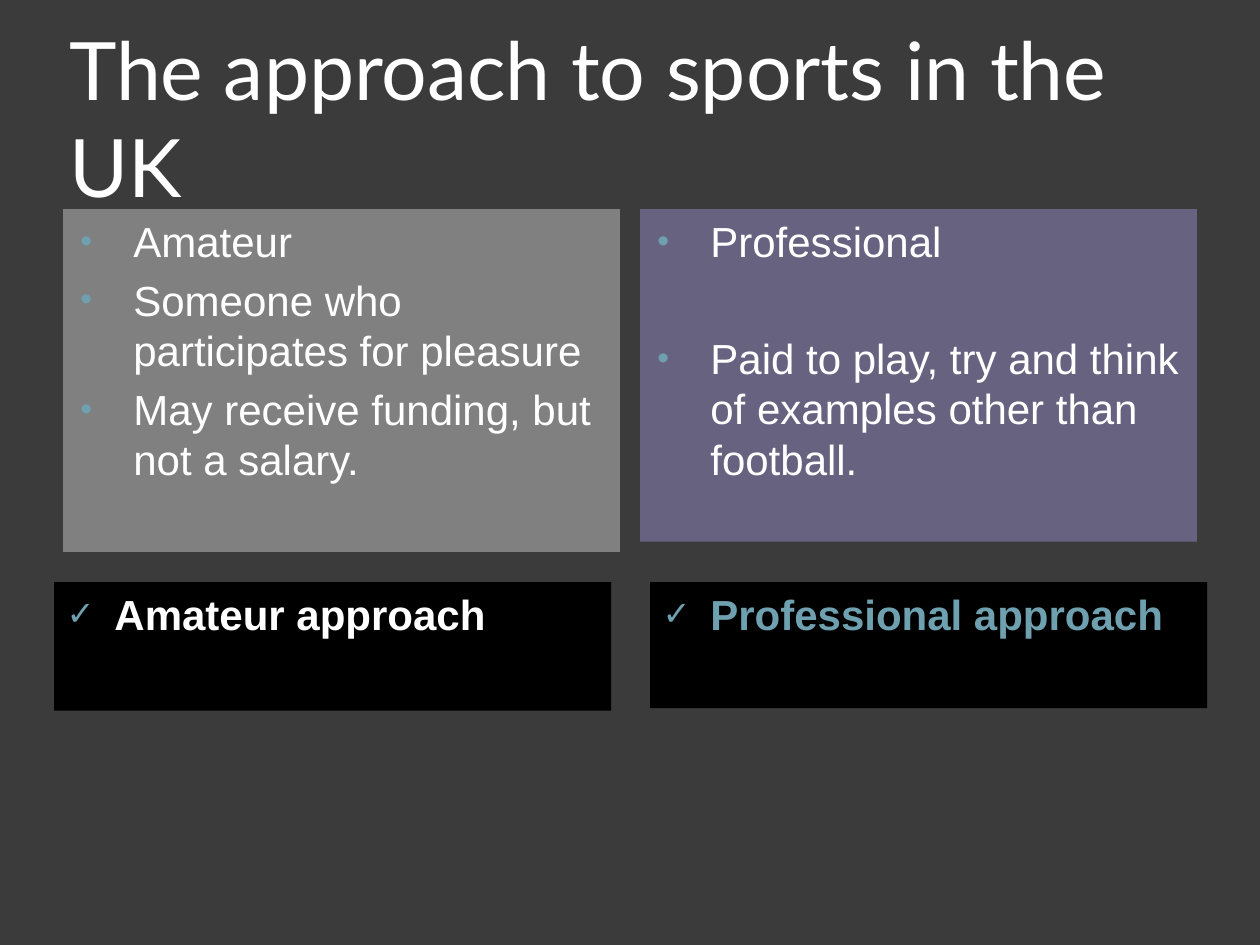
from lxml.etree import SubElement
from pptx import Presentation
from pptx.dml.color import RGBColor
from pptx.enum.shapes import MSO_SHAPE as Shape
from pptx.enum.text import MSO_ANCHOR as Anchor, PP_ALIGN as Align
from pptx.oxml.ns import qn
from pptx.util import Inches, Pt

WHITE, TEAL, BLACK = "FFFFFF", "6EA0B0", "000000"
GREY, PURPLE, DARK = "808080", "67627F", "3B3B3B"
WIDE = 4.42


def paint(fill, color):
    fill.solid()
    fill.fore_color.rgb = RGBColor.from_string(color)


def style(para, size, name, color, bold=False):
    para.alignment = Align.LEFT
    for run in para.runs:
        font = run.font
        font.size, font.name, font.bold = Pt(size), name, bold
        font.color.rgb = RGBColor.from_string(color)


def add_mark(para, mark, left, hang):
    """Give the paragraph a teal bullet and a hanging indent."""
    props = para._p.get_or_add_pPr()
    props.set("marL", str(Inches(left)))
    props.set("indent", str(-Inches(hang)))
    tint = SubElement(props, qn("a:buClr"))
    SubElement(tint, qn("a:srgbClr"), val=TEAL)
    SubElement(props, qn("a:buSzPct"), val="80000")
    SubElement(props, qn("a:buFont"), typeface="Arial")
    SubElement(props, qn("a:buChar"), char=mark)


def add_title(slide, box, text):
    frame = slide.shapes.add_textbox(*map(Inches, box)).text_frame
    frame.word_wrap = True
    frame.vertical_anchor = Anchor.MIDDLE
    frame.margin_left = frame.margin_right = Inches(0.05)
    frame.text = text
    style(frame.paragraphs[0], 46, "Lato", WHITE)


def add_panel(slide, box, fill, lines, mark="•", left=0.46, hang=0.42,
              color=WHITE, bold=False):
    panel = slide.shapes.add_shape(Shape.RECTANGLE, *map(Inches, box))
    panel.shadow.inherit = False
    paint(panel.fill, fill)
    panel.line.fill.background()
    frame = panel.text_frame
    frame.word_wrap = True
    frame.vertical_anchor = Anchor.TOP
    frame.text = "\n".join(lines)
    for para in frame.paragraphs:
        style(para, 24, "Arial", color, bold)
        para.space_before = Pt(4.8)
        add_mark(para, mark, left, hang)
    return frame


def add_label(slide, box, text, color):
    add_panel(slide, box, BLACK, [text], "✓", 0.38, 0.38, color, True)


def main():
    deck = Presentation()
    deck.slide_width, deck.slide_height = Inches(10), Inches(7.5)
    slide = deck.slides.add_slide(deck.slide_layouts[6])
    paint(slide.background.fill, DARK)

    add_title(slide, (0.5, 0.3, 9, 1.25), "The approach to sports in the UK")
    add_label(slide, (0.43, 4.62, WIDE, 1.02), "Amateur approach", WHITE)
    add_label(slide, (5.16, 4.62, WIDE, 1), "Professional approach", TEAL)
    add_panel(slide, (0.5, 1.66, WIDE, 2.72), GREY, [
        "Amateur",
        "Someone who participates for pleasure",
        "May receive funding, but not a salary.",
    ])
    pro = add_panel(slide, (5.08, 1.66, WIDE, 2.64), PURPLE, [
        "Professional",
        "Paid to play, try and think of examples other than football.",
    ])
    pro.paragraphs[1].space_before = Pt(38)
    deck.save("out.pptx")


if __name__ == "__main__":
    main()
